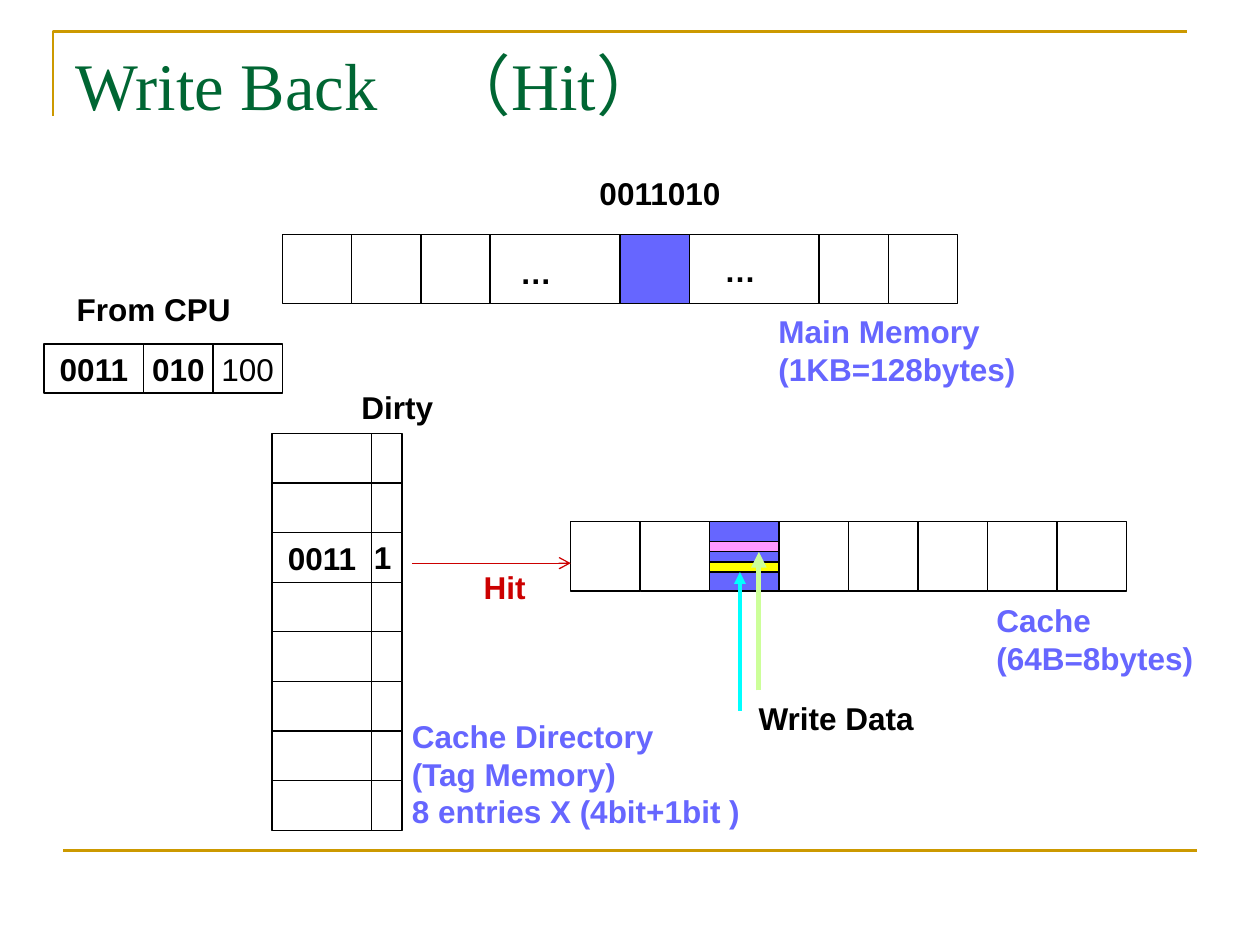
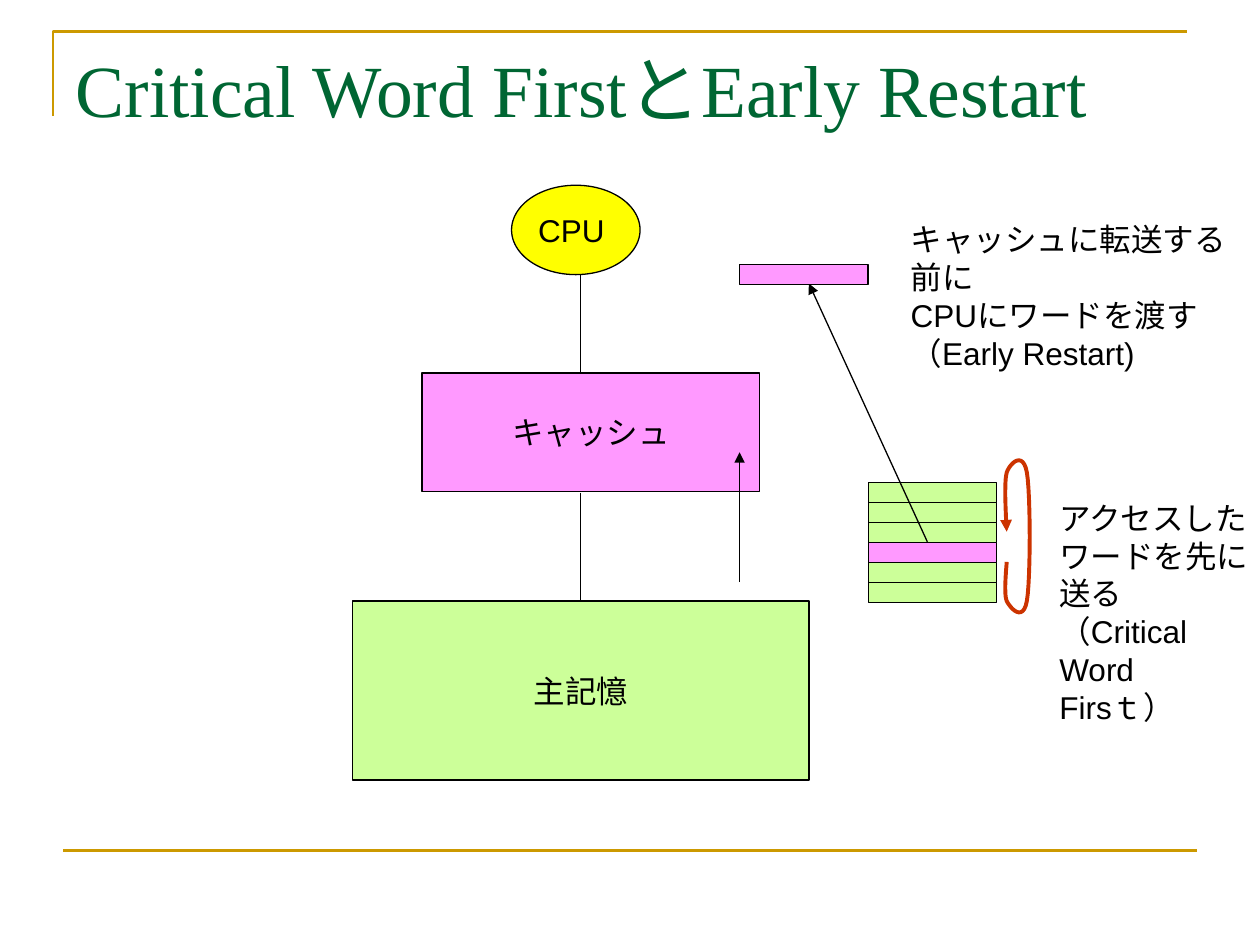
from typing import NamedTuple

from lxml.etree import SubElement
from pptx import Presentation
from pptx.dml.color import RGBColor
from pptx.enum.shapes import MSO_CONNECTOR as Connector, MSO_SHAPE as Shape
from pptx.enum.text import MSO_ANCHOR as Anchor, MSO_AUTO_SIZE as AutoSize, PP_ALIGN as Align
from pptx.oxml.ns import qn
from pptx.util import Inches, Pt

COLORS = {
    "gold": "CC9900", "title": "006633", "black": "000000", "white": "FFFFFF",
    "blue": "6666FF", "pink": "FF99FF", "green": "CCFF99", "yellow": "FFFF00",
    "cyan": "00FFFF", "red": "CC0000", "rust": "CC3300",
}
BODY_FONT = "Arial"
TITLE_FONT = "Times New Roman"
TITLE_ONLY = 5
CELL = 0.55


class Box(NamedTuple):
    """A rectangle in inches."""
    left: float
    top: float
    width: float
    height: float

    def inner(self, left, top, width, height):
        """Return a box placed relative to this one."""
        return Box(self.left + left, self.top + top, width, height)

    def point(self, x, y):
        """Return a point placed relative to this box."""
        return self.left + x, self.top + y

    def columns(self, count):
        """Split the box into equal columns."""
        width = self.width / count
        return [self.inner(i * width, 0, width, self.height) for i in range(count)]

    def rows(self, count):
        """Split the box into equal rows."""
        height = self.height / count
        return [self.inner(0, i * height, self.width, height) for i in range(count)]

    def lengths(self):
        """Return the four sides as lengths."""
        return [Inches(value) for value in self]


def rgb(name):
    """Look up a named colour."""
    return RGBColor.from_string(COLORS[name])


def add_run(paragraph, text, size, color, font=BODY_FONT, bold=False):
    """Append one formatted run."""
    run = paragraph.add_run()
    run.text = text
    run.font.name, run.font.size, run.font.bold = font, Pt(size), bold
    run.font.color.rgb = rgb(color)


def add_block(slide, box, fill="white", text="", bold=False, kind=Shape.RECTANGLE):
    """Draw an outlined shape with optional centred text."""
    shape = slide.shapes.add_shape(kind, *box.lengths())
    shape.shadow.inherit = False
    if fill:
        shape.fill.solid()
        shape.fill.fore_color.rgb = rgb(fill)
    else:
        shape.fill.background()
    shape.line.color.rgb, shape.line.width = rgb("black"), Pt(0.75)
    if text:
        frame = shape.text_frame
        frame.word_wrap, frame.vertical_anchor = False, Anchor.MIDDLE
        frame.paragraphs[0].alignment = Align.CENTER
        add_run(frame.paragraphs[0], text, 18, color="black", bold=bold)
    return shape


def add_label(slide, box, *lines, color="black", bold=True, wrap=False):
    """Write one paragraph per line in a text box."""
    frame = slide.shapes.add_textbox(*box.lengths()).text_frame
    frame.word_wrap, frame.auto_size = wrap, AutoSize.SHAPE_TO_FIT_TEXT
    for index, line in enumerate(lines):
        paragraph = frame.add_paragraph() if index else frame.paragraphs[0]
        add_run(paragraph, line, 18, color, bold=bold)


def style_line(shape, color, width, arrow=None):
    """Set the stroke and an optional arrowhead at its end."""
    shape.line.color.rgb, shape.line.width = rgb(color), Pt(width)
    if arrow:
        SubElement(shape.element.spPr.find(qn("a:ln")), qn("a:tailEnd"), type=arrow)


def add_line(slide, start, end, color="black", width=0.75, arrow=None):
    """Draw a straight connector without a shadow."""
    ends = [Inches(value) for value in (*start, *end)]
    connector = slide.shapes.add_connector(Connector.STRAIGHT, *ends)
    style_line(connector, color, width, arrow)
    SubElement(connector.element.spPr, qn("a:effectLst"))
    return connector


def add_path(slide, points, color, width, arrow=None):
    """Draw an open unfilled outline."""
    start, *others = [(Inches(x), Inches(y)) for x, y in points]
    builder = slide.shapes.build_freeform(*start)
    builder.add_line_segments(others, close=False)
    shape = builder.convert_to_shape()
    shape.shadow.inherit = False
    shape.fill.background()
    style_line(shape, color, width, arrow)


def curve_points(start, curves, steps=12):
    """Trace a chain of cubic curves as points."""
    points = [start]
    for first, second, end in curves:
        corners = list(zip(points[-1], first, second, end))
        for step in range(1, steps + 1):
            t = step / steps
            u = 1 - t
            points.append(tuple(
                u**3 * a + 3 * u * u * t * b + 3 * u * t * t * c + t**3 * d
                for a, b, c, d in corners))
    return points


def add_framed_slide(presentation, title, size):
    """Add a slide with the gold frame and the title."""
    slide = presentation.slides.add_slide(presentation.slide_layouts[TITLE_ONLY])
    add_path(slide, [(0.42, 0.92), (0.42, 0.25), (9.42, 0.25)], "gold", 1.5)
    add_line(slide, (0.5, 6.75), (9.5, 6.75), "gold", 1.5)
    holder = slide.shapes.title
    holder.left, holder.top, holder.width, holder.height = Box(0.5, 0.3, 9, 1.25).lengths()
    frame = holder.text_frame
    frame.vertical_anchor, frame.auto_size = Anchor.TOP, AutoSize.NONE
    frame.paragraphs[0].alignment = Align.LEFT
    add_run(frame.paragraphs[0], title, size, "title", TITLE_FONT)
    return slide


def draw_main_memory(slide, box):
    """Draw the memory row with its addressed block."""
    gap = (box.width - 6 * CELL) / 2
    add_block(slide, box.inner(3 * CELL, 0, CELL + 2 * gap, box.height), fill=None)
    for index in range(6):
        gaps = (index >= 3) + (index >= 4)
        cell = box.inner(index * CELL + gaps * gap, 0, CELL, box.height)
        add_block(slide, cell, "blue" if index == 3 else "white")
    add_label(slide, box.inner(1.79, 0.1, 0.45, 0.4), "…")
    add_label(slide, box.inner(3.41, 0.08, 0.45, 0.4), "…")
    add_label(slide, box.inner(2.42, -0.53, 1.17, 0.4), "0011010")
    add_label(slide, box.inner(3.84, 0.57, 2.08, 1), "Main Memory", "(1KB=128bytes)", color="blue")


def draw_address(slide, box):
    """Draw the three fields of the address sent by the CPU."""
    add_label(slide, box.inner(0.16, -0.48, 1.42, 0.4), "From CPU")
    left = 0
    for text, width, bold in (("0011", 0.79, True), ("010", CELL, True), ("100", CELL, False)):
        add_block(slide, box.inner(left, 0, width, box.height), text=text, bold=bold)
        left += width


def draw_directory(slide, box):
    """Draw the tag column and the dirty bit column."""
    tag_width = 0.79
    tags = box.inner(0, 0, tag_width, box.height)
    bits = box.inner(tag_width, 0, box.width - tag_width, box.height)
    for index, (tag, bit) in enumerate(zip(tags.rows(8), bits.rows(8))):
        add_block(slide, tag, text="0011" if index == 2 else "", bold=True)
        add_block(slide, bit)
    add_label(slide, box.inner(0.71, 0.78, 0.34, 0.4), "1")
    add_label(slide, box.inner(0.61, -0.41, 0.77, 0.4), "Dirty")
    add_label(slide, box.inner(1.01, 2.2, 2.81, 1.3), "Cache Directory", "(Tag Memory)",
              "8 entries X (4bit+1bit )", color="blue")


def draw_cache(slide, box):
    """Draw the cache row, the hit arrow and the written words."""
    cells = box.columns(8)
    for index, cell in enumerate(cells):
        add_block(slide, cell, "blue" if index == 2 else "white")
    hit = cells[2]
    add_block(slide, hit.inner(0, 0.32, hit.width, 0.08), "yellow")
    add_line(slide, hit.point(0.24, 1.5), hit.point(0.24, 0.4), "cyan", 2.25, "triangle")
    add_line(slide, hit.point(0.39, 1.34), hit.point(0.39, 0.24), "green", 3, "triangle")
    add_block(slide, hit.inner(0, 0.16, hit.width, 0.08), "pink")
    add_label(slide, hit.inner(0.29, 1.36, 1.44, 0.4), "Write Data")
    add_line(slide, box.point(-1.26, 0.33), box.point(0, 0.33), "red", arrow="arrow")
    add_label(slide, box.inner(-0.79, 0.32, 0.54, 0.4), "Hit", color="red")
    add_label(slide, box.inner(3.28, 0.58, 1.76, 0.7), "Cache", "(64B=8bytes)", color="blue")


def draw_hierarchy(slide, box):
    """Draw the CPU, cache and main memory from top to bottom."""
    axis = 1.81
    add_line(slide, box.point(axis, 0.63), box.point(axis, 1.49))
    add_block(slide, box.inner(0.55, 1.49, 2.68, 0.94), "pink", "キャッシュ")
    memory = add_block(slide, box.inner(0, 3.3, box.width, 1.42), "green", "主記憶")
    link = add_line(slide, box.point(axis, 2.44), box.point(axis, 3.3))
    link.end_connect(memory, 0)
    add_block(slide, box.inner(1.26, 0, 1.02, 0.71), "yellow", "CPU ", kind=Shape.OVAL)
    add_line(slide, box.point(3.07, 3.15), box.point(3.07, 2.12), arrow="triangle")


def draw_word_block(slide, box):
    """Draw the words of a block and the wrap-around order."""
    for index, word in enumerate(box.rows(6)):
        add_block(slide, word, "pink" if index == 3 else "green")
    loop = box.inner(1.08, -0.25, 0.21, 1.36)
    curves = [
        ((0.01, 1.01), (0, 1.14), (0.02, 1.19)),
        ((0.05, 1.25), (0.15, 1.36), (0.18, 1.19)),
        ((0.21, 1.02), (0.21, 0.34), (0.18, 0.17)),
        ((0.15, 0), (0.05, 0.09), (0.02, 0.17)),
        ((0, 0.25), (0.01, 0.44), (0.02, 0.64)),
    ]
    points = [loop.point(x, y) for x, y in curve_points((0.02, 0.88), curves)]
    add_path(slide, points, "rust", 2.25, "triangle")
    add_label(slide, box.inner(1.42, 0.08, 1.76, 1.6), "アクセスした", "ワードを先に", "送る",
              "（Critical Word", "Firsｔ）", bold=False, wrap=True)


def draw_early_word(slide, box):
    """Draw the word handed to the CPU ahead of the cache."""
    add_line(slide, box.point(1.49, 2.2), box.point(0.55, 0.15), arrow="triangle")
    add_block(slide, box, "pink")
    add_label(slide, box.inner(1.26, -0.4, 2.93, 1), "キャッシュに転送する前に",
              "CPUにワードを渡す", "（Early Restart)", bold=False, wrap=True)


def build_write_back(presentation):
    """Build the write back slide."""
    slide = add_framed_slide(presentation, "Write Back　（Hit）", 38)
    draw_main_memory(slide, Box(2.24, 1.86, 5.36, CELL))
    draw_directory(slide, Box(2.16, 3.44, 1.03, 3.15))
    draw_cache(slide, Box(4.53, 4.14, 4.41, CELL))
    draw_address(slide, Box(0.35, 2.73, 1.89, 0.39))


def build_critical_word(presentation):
    """Build the critical word first slide."""
    slide = add_framed_slide(presentation, "Critical Word FirstとEarly Restart", 42)
    draw_hierarchy(slide, Box(2.8, 1.47, 3.62, 4.72))
    draw_word_block(slide, Box(6.89, 3.83, 1.02, 0.95))
    draw_early_word(slide, Box(5.87, 2.1, 1.02, 0.16))


def main():
    """Build and save the presentation."""
    presentation = Presentation()
    presentation.slide_width, presentation.slide_height = Inches(10), Inches(7.5)
    build_write_back(presentation)
    build_critical_word(presentation)
    presentation.save("out.pptx")


if __name__ == "__main__":
    main()
